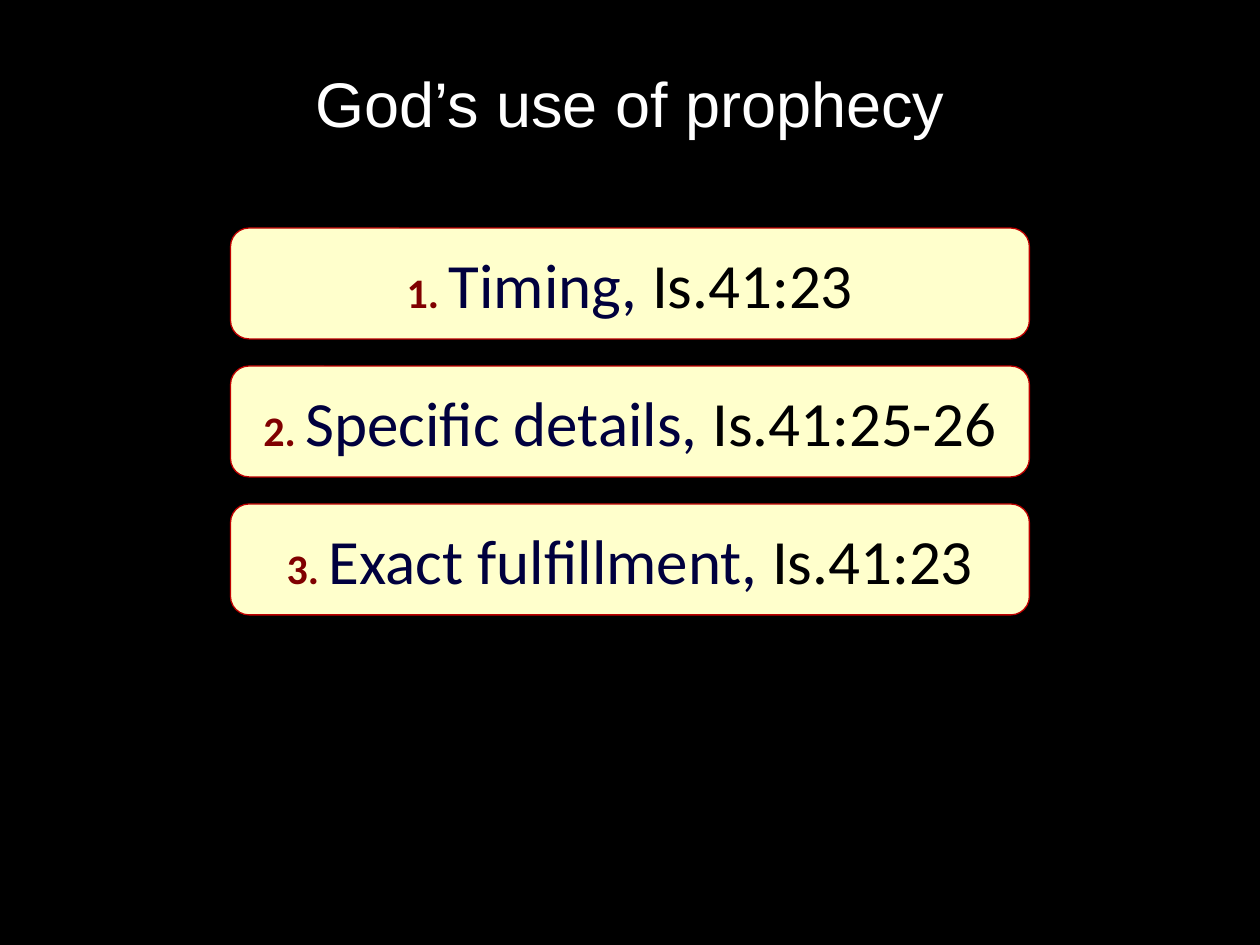
from pptx import Presentation
from pptx.dml.color import RGBColor as Rgb
from pptx.enum.shapes import MSO_SHAPE as Shape
from pptx.enum.text import MSO_ANCHOR as Anchor, PP_ALIGN as Align
from pptx.util import Inches, Pt

HUES = {
    "back": "000000",
    "title": "FFFFFF",
    "card": "FFFFCC",
    "edge": "C00000",
    "number": "800000",
    "point": "00003E",
    "verse": "000000",
}
POINTS = [
    ("Timing", "Is.41:23"),
    ("Specific details", "Is.41:25-26"),
    ("Exact fulfillment", "Is.41:23"),
]
FIRST, LAST = 1.81, 4
STEP = (LAST - FIRST) / (len(POINTS) - 1)


class Deck:
    def __init__(self, wide, high):
        self.show = Presentation()
        self.show.slide_width = Inches(wide)
        self.show.slide_height = Inches(high)
        self.slide = self.show.slides.add_slide(self.show.slide_layouts[6])
        self.paint(self.slide.background.fill, "back")

    def paint(self, fill, hue):
        fill.solid()
        fill.fore_color.rgb = Rgb.from_string(HUES[hue])

    def label(self, shape, face, runs):
        frame = shape.text_frame
        frame.word_wrap = True
        frame.vertical_anchor = Anchor.MIDDLE
        para = frame.paragraphs[0]
        para.alignment = Align.CENTER
        para.font.name = face
        para.font.size = Pt(36)
        for text, hue in runs:
            run = para.add_run()
            run.text = text
            run.font.color.rgb = Rgb.from_string(HUES[hue])
            if hue == "number":
                run.font.size = Pt(24)
                run.font.bold = True

    def title(self, text, *area):
        box = self.slide.shapes.add_textbox(*map(Inches, area))
        self.label(box, "Arial", [(text, "title")])

    def card(self, runs, *area):
        card = self.slide.shapes.add_shape(
            Shape.ROUNDED_RECTANGLE, *map(Inches, area))
        card.shadow.inherit = False
        self.paint(card.fill, "card")
        self.paint(card.line.fill, "edge")
        card.line.width = Pt(0.75)
        self.label(card, "Calibri", runs)


def main():
    deck = Deck(10, 7.5)
    deck.title("God’s use of prophecy", 0.5, 0.25, 9, 1.12)
    for row, (point, verse) in enumerate(POINTS):
        runs = [(f"{row + 1}. ", "number"), (f"{point}, ", "point"),
                (verse, "verse")]
        deck.card(runs, 1.83, FIRST + row * STEP, 6.34, 0.88)
    deck.show.save("out.pptx")


if __name__ == "__main__":
    main()
